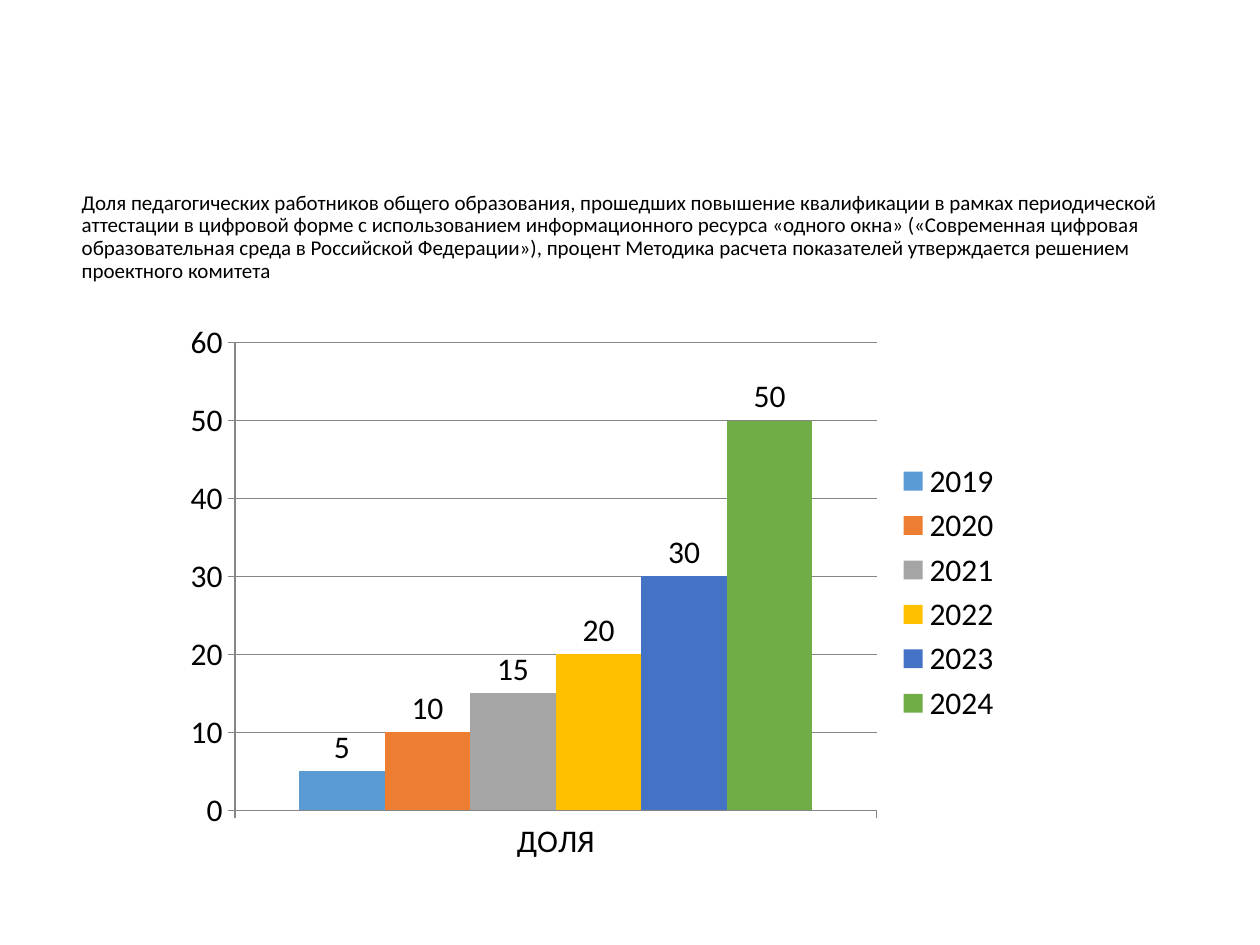
from pptx import Presentation
from pptx import util as u
from pptx.chart.data import CategoryChartData
from pptx.dml.color import RGBColor
from pptx.enum import chart as ch, text as tx

# Content
TITLE = (
    "Доля педагогических работников общего образования, прошедших повышение "
    "квалификации в рамках периодической аттестации в цифровой форме с "
    "использованием информационного ресурса «одного окна» («Современная "
    "цифровая образовательная среда в Российской Федерации»), процент "
    "Методика расчета показателей утверждается решением проектного комитета"
)
GROUP = "ДОЛЯ"
SHARES = [
    ("2019", 5, "5B9BD5"),
    ("2020", 10, "ED7D31"),
    ("2021", 15, "A5A5A5"),
    ("2022", 20, "FFC000"),
    ("2023", 30, "4472C4"),
    ("2024", 50, "70AD47"),
]
THEME = {"font": "Calibri", "ink": "000000", "line": "868686",
         "title": 12, "chart": 18}
SPOTS = {"title": (0.55, 1.14, 9.12, 1.67), "chart": (1.38, 2.48, 6.67, 4.44)}


def place(name):
    return [u.Inches(n) for n in SPOTS[name]]


def style(font, size):
    font.name = THEME["font"]
    font.size = u.Pt(THEME[size])
    font.color.rgb = RGBColor.from_string(THEME["ink"])


def rule(line):
    line.color.rgb = RGBColor.from_string(THEME["line"])
    line.width = u.Pt(0.75)


def add_title(slide):
    frame = slide.shapes.add_textbox(*place("title")).text_frame
    frame.word_wrap = True
    frame.vertical_anchor = tx.MSO_ANCHOR.MIDDLE
    frame.margin_bottom = u.Inches(0.23)
    frame.text = TITLE
    para = frame.paragraphs[0]
    para.line_spacing = 0.9
    style(para.runs[0].font, "title")


def add_bars(slide):
    data = CategoryChartData()
    data.categories = [GROUP]
    for year, share, _ in SHARES:
        data.add_series(year, [share])
    kind = ch.XL_CHART_TYPE.COLUMN_CLUSTERED
    chart = slide.shapes.add_chart(kind, *place("chart"), data).chart
    style(chart.font, "chart")
    chart.has_title = False

    # Legend
    chart.has_legend = True
    chart.legend.position = ch.XL_LEGEND_POSITION.RIGHT
    chart.legend.include_in_layout = False

    # Axes
    for axis in (chart.category_axis, chart.value_axis):
        axis.major_tick_mark = ch.XL_TICK_MARK.OUTSIDE
        axis.minor_tick_mark = ch.XL_TICK_MARK.NONE
        rule(axis.format.line)
    value = chart.value_axis
    value.minimum_scale, value.maximum_scale, value.major_unit = 0, 60, 10
    value.has_major_gridlines = True
    rule(value.major_gridlines.format.line)

    # Bars and labels
    plot = chart.plots[0]
    plot.gap_width, plot.overlap = 150, 0
    plot.vary_by_categories = False
    for bar, (_, _, color) in zip(plot.series, SHARES):
        bar.format.fill.solid()
        bar.format.fill.fore_color.rgb = RGBColor.from_string(color)
        bar.data_labels.show_value = True
        bar.data_labels.position = ch.XL_LABEL_POSITION.OUTSIDE_END


def main():
    deck = Presentation()
    deck.slide_width, deck.slide_height = u.Inches(10), u.Inches(7.5)
    slide = deck.slides.add_slide(deck.slide_layouts[6])
    add_title(slide)
    add_bars(slide)
    deck.save("out.pptx")


if __name__ == "__main__":
    main()
